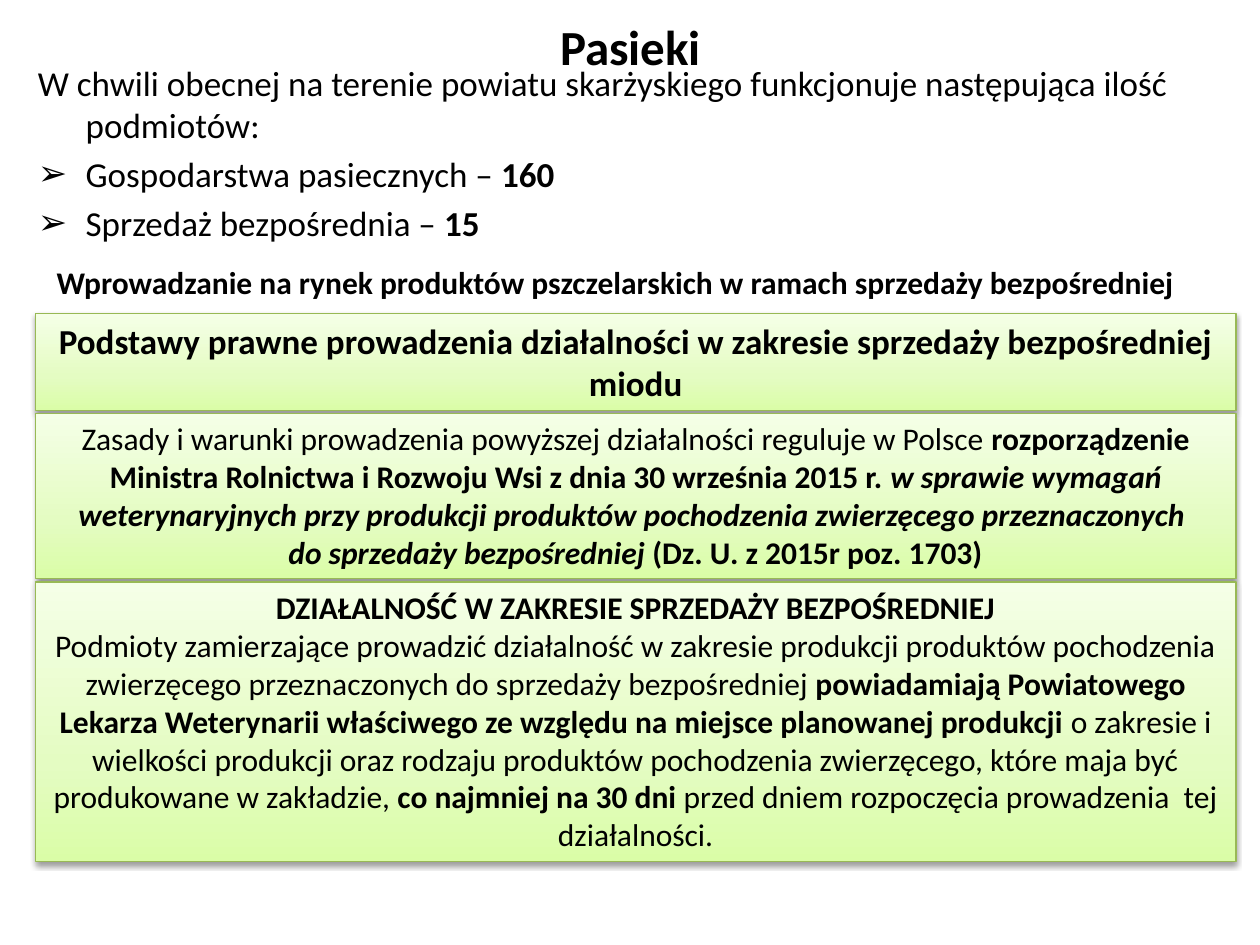
"""Build the slide about apiaries and the direct sale of honey."""
from copy import deepcopy
from dataclasses import dataclass

from lxml.etree import SubElement
from pptx import Presentation
from pptx.dml.color import RGBColor
from pptx.enum.shapes import MSO_SHAPE as Shape
from pptx.enum.text import MSO_ANCHOR as Anchor, MSO_AUTO_SIZE as AutoSize, PP_ALIGN as Align
from pptx.oxml.ns import qn
from pptx.util import Inches, Pt


@dataclass(frozen=True)
class Theme:
    font: str = "Calibri"
    text: str = "000000"
    border: str = "98B955"
    gradient: tuple = ((0, "DAFDA7"), (0.35, "E4FCC2"), (1, "F5FFE7"))
    title: int = 28
    large: int = 20
    normal: int = 18


@dataclass(frozen=True)
class Run:
    text: str
    bold: bool = False
    italic: bool = False


@dataclass(frozen=True)
class Panel:
    top: float
    height: float
    size: int
    paragraphs: tuple


THEME = Theme()
PANEL_LEFT, PANEL_WIDTH = 0.28, 9.53
HANGING = 0.38

TITLE = ((Run("Pasieki", True),),)
BODY = (
    (Run("W chwili obecnej na terenie powiatu skarżyskiego funkcjonuje następująca ilość podmiotów:"),),
    (Run("Gospodarstwa pasiecznych – "), Run("160", True)),
    (Run("Sprzedaż bezpośrednia – "), Run("15", True)),
)
SUBTITLE = (
    (Run("Wprowadzanie na rynek produktów pszczelarskich w ramach sprzedaży bezpośredniej", True),),
)
PANELS = (
    Panel(2.49, 0.77, THEME.large, (
        (Run("Podstawy prawne prowadzenia działalności w zakresie sprzedaży bezpośredniej miodu", True),),
    )),
    Panel(3.28, 1.31, THEME.normal, (
        (
            Run("Zasady i warunki prowadzenia powyższej działalności reguluje w Polsce "),
            Run("rozporządzenie Ministra Rolnictwa i Rozwoju Wsi z dnia 30 września 2015 r. ", True),
            Run("w sprawie wymagań weterynaryjnych przy produkcji produktów pochodzenia "
                "zwierzęcego przeznaczonych \ndo sprzedaży bezpośredniej", True, True),
            Run(" (Dz. U. z 2015r poz. 1703)", True),
        ),
    )),
    Panel(4.62, 2.22, THEME.normal, (
        (Run("DZIAŁALNOŚĆ W ZAKRESIE SPRZEDAŻY BEZPOŚREDNIEJ", True),),
        (
            Run("Podmioty zamierzające prowadzić działalność w zakresie produkcji produktów "
                "pochodzenia zwierzęcego przeznaczonych do sprzedaży bezpośredniej "),
            Run("powiadamiają Powiatowego Lekarza Weterynarii właściwego ze względu na "
                "miejsce planowanej produkcji ", True),
            Run("o zakresie i wielkości produkcji oraz rodzaju produktów pochodzenia "
                "zwierzęcego, które maja być produkowane w zakładzie, "),
            Run("co najmniej na 30 dni ", True),
            Run("przed dniem rozpoczęcia prowadzenia  tej działalności."),
        ),
    )),
)


def set_values(target, values: dict) -> None:
    for name, value in values.items():
        setattr(target, name, value)


def place(shape, left: float, top: float, width: float, height: float) -> None:
    set_values(shape, {"left": Inches(left), "top": Inches(top),
                       "width": Inches(width), "height": Inches(height)})


def write_text(shape, paragraphs: tuple, size: int, align=Align.CENTER, anchor=Anchor.TOP) -> None:
    frame = shape.text_frame
    set_values(frame, {"word_wrap": True, "auto_size": AutoSize.NONE, "vertical_anchor": anchor})
    for index, runs in enumerate(paragraphs):
        paragraph = frame.add_paragraph() if index else frame.paragraphs[0]
        set_values(paragraph, {"alignment": align, "space_before": Pt(0)})
        for item in runs:
            for line, text in enumerate(item.text.split("\n")):
                if line:
                    paragraph.add_line_break()
                run = paragraph.add_run()
                run.text = text
                set_values(run.font, {"name": THEME.font, "size": Pt(size),
                                      "bold": item.bold, "italic": item.italic})
                run.font.color.rgb = RGBColor.from_string(THEME.text)


def format_list(shape) -> None:
    for index, paragraph in enumerate(shape.text_frame.paragraphs):
        properties = paragraph._p.get_or_add_pPr()
        properties.set("marL", str(Inches(HANGING)))
        properties.set("indent", str(-Inches(HANGING)))
        if index:
            SubElement(properties, qn("a:buChar"), char="➢")
            paragraph.space_before = Pt(4)
        else:
            SubElement(properties, qn("a:buNone"))


def fill_gradient(shape) -> None:
    shape.fill.gradient()
    shape.fill.gradient_angle = 90
    stop_list = shape._element.spPr.find(".//" + qn("a:gsLst"))
    stop_list.insert(1, deepcopy(stop_list[0]))
    for stop, (position, color) in zip(shape.fill.gradient_stops, THEME.gradient):
        stop.position = position
        stop.color.rgb = RGBColor.from_string(color)


def add_shadow(shape) -> None:
    shape.shadow.inherit = False
    effects = shape._element.spPr.find(qn("a:effectLst"))
    shadow = SubElement(effects, qn("a:outerShdw"), blurRad=str(Pt(3.1)), dist=str(Pt(1.6)),
                        dir="5400000", rotWithShape="0")
    color = SubElement(shadow, qn("a:srgbClr"), val="000000")
    SubElement(color, qn("a:alpha"), val="38000")


def draw_panel(slide, panel: Panel) -> None:
    shape = slide.shapes.add_shape(Shape.RECTANGLE, Inches(PANEL_LEFT), Inches(panel.top),
                                   Inches(PANEL_WIDTH), Inches(panel.height))
    fill_gradient(shape)
    shape.line.color.rgb = RGBColor.from_string(THEME.border)
    shape.line.width = Pt(0.75)
    add_shadow(shape)
    write_text(shape, panel.paragraphs, panel.size)


def main() -> None:
    presentation = Presentation()
    set_values(presentation, {"slide_width": Inches(10), "slide_height": Inches(7.5)})
    slide = presentation.slides.add_slide(presentation.slide_layouts[1])
    title, body = slide.shapes.title, slide.placeholders[1]
    place(title, 0.2, 0.21, 9.61, 0.31)
    write_text(title, TITLE, THEME.title, anchor=Anchor.MIDDLE)
    place(body, 0.2, 0.44, 9.61, 1.65)
    write_text(body, BODY, THEME.large, Align.LEFT)
    format_list(body)
    subtitle = slide.shapes.add_textbox(Inches(PANEL_LEFT), Inches(2.04), Inches(9.21), Inches(0.4))
    write_text(subtitle, SUBTITLE, THEME.normal)
    for panel in PANELS:
        draw_panel(slide, panel)
    presentation.save("out.pptx")


if __name__ == "__main__":
    main()
